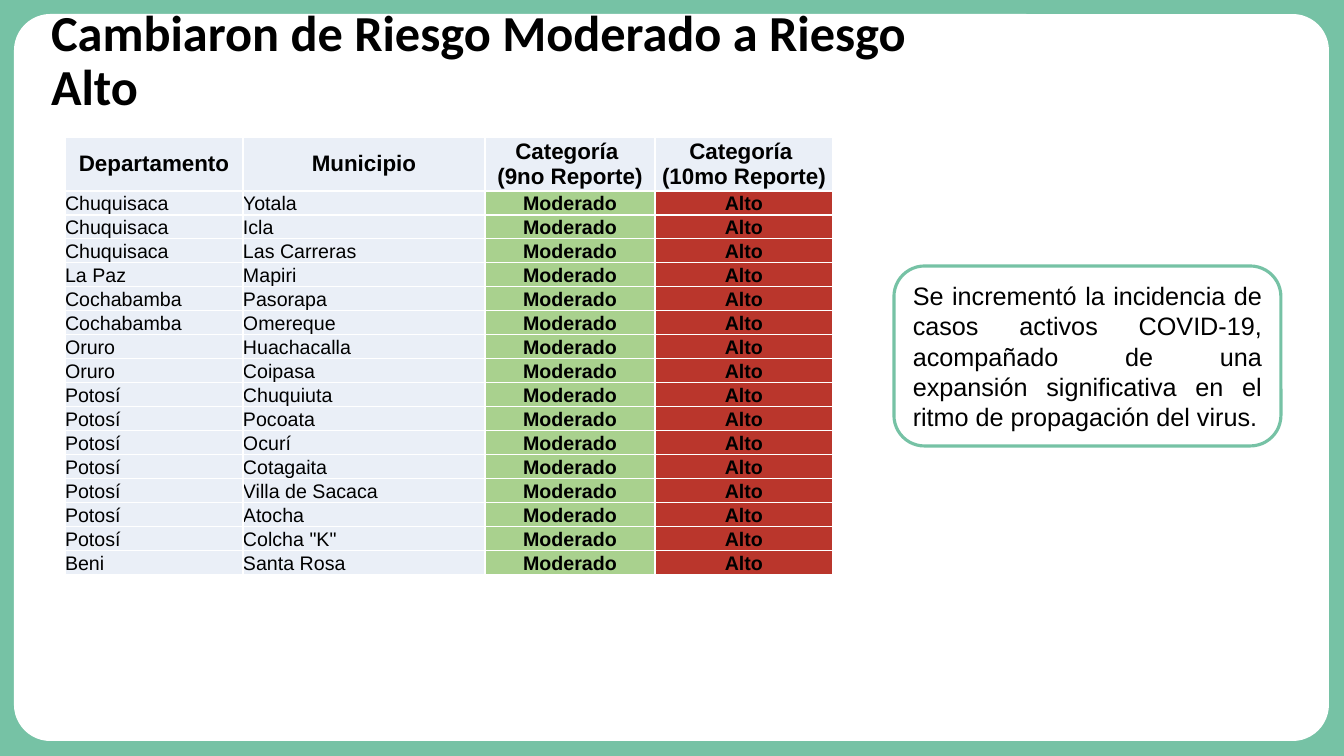
from dataclasses import dataclass

from lxml.etree import SubElement
from pptx import Presentation
from pptx.dml.color import RGBColor as Color
from pptx.enum.shapes import MSO_SHAPE as Shape
from pptx.enum.text import MSO_ANCHOR as Anchor, MSO_AUTO_SIZE as Fit, PP_ALIGN as Align
from pptx.oxml.ns import qn
from pptx.util import Emu, Pt


@dataclass(frozen=True)
class Theme:
    green: str = "76C2A5"
    white: str = "FFFFFF"
    black: str = "000000"
    pale: str = "EAEFF7"
    mild: str = "A9D18E"
    high: str = "BA362C"
    head: str = "Calibri"
    body: str = "Arial"
    title: int = 36
    note: int = 18
    label: int = 16
    cell: int = 14


THEME = Theme()
SCALE = 914400 / 100.8
WIDTHS = (178, 242, 170, 178)
HEADS = (
    "Departamento",
    "Municipio",
    "Categoría \n(9no Reporte)",
    "Categoría \n(10mo Reporte)",
)
TOWNS = {
    "Chuquisaca": ("Yotala", "Icla", "Las Carreras"),
    "La Paz": ("Mapiri",),
    "Cochabamba": ("Pasorapa", "Omereque"),
    "Oruro": ("Huachacalla", "Coipasa"),
    "Potosí": (
        "Chuquiuta", "Pocoata", "Ocurí", "Cotagaita",
        "Villa de Sacaca", "Atocha", 'Colcha "K"',
    ),
    "Beni": ("Santa Rosa",),
}


def px(size):
    return Emu(round(size * SCALE))


def paint(fill, color):
    fill.solid()
    fill.fore_color.rgb = Color.from_string(color)


def write(frame, text, size, font, align, bold=False):
    frame.text = text
    for para in frame.paragraphs:
        para.alignment = align
        for run in para.runs:
            run.font.size = Pt(size)
            run.font.name = font
            run.font.bold = bold
            run.font.color.rgb = Color.from_string(THEME.black)


def add_box(slide, box, curve):
    shape = slide.shapes.add_shape(Shape.ROUNDED_RECTANGLE, *map(px, box))
    shape.shadow.inherit = False
    shape.adjustments[0] = curve
    return shape


def add_card(slide):
    card = add_box(slide, (14, 14, 1315, 727), 0.05)
    paint(card.fill, THEME.white)
    card.line.fill.background()


def add_note(slide, text):
    note = add_box(slide, (894, 266, 387, 180), 0.17)
    note.fill.background()
    note.line.color.rgb = Color.from_string(THEME.green)
    note.line.width = Pt(2.25)
    note.text_frame.word_wrap = True
    note.text_frame.vertical_anchor = Anchor.MIDDLE
    write(note.text_frame, text, THEME.note, THEME.body, Align.JUSTIFY)


def add_edges(cell):
    props = cell._tc.get_or_add_tcPr()
    for side in ("lnL", "lnR", "lnT", "lnB"):
        edge = SubElement(props, qn(f"a:{side}"), w=str(Pt(1)))
        fill = SubElement(edge, qn("a:solidFill"))
        SubElement(fill, qn("a:srgbClr"), val=THEME.white)


def fill_cell(cell, text, color, size, align, bold, anchor):
    add_edges(cell)
    paint(cell.fill, color)
    cell.margin_left = cell.margin_right = 0
    cell.margin_top = cell.margin_bottom = 0
    cell.vertical_anchor = anchor
    write(cell.text_frame, text, size, THEME.body, align, bold)


def add_grid(slide):
    rows = [(area, town, "Moderado", "Alto") for area, towns in TOWNS.items() for town in towns]
    tall = [54] + [24] * len(rows)
    box = (65, 137, sum(WIDTHS), sum(tall))
    grid = slide.shapes.add_table(len(tall), len(WIDTHS), *map(px, box)).table
    grid.first_row = grid.horz_banding = False
    for col, width in zip(grid.columns, WIDTHS):
        col.width = px(width)
    for row, height in zip(grid.rows, tall):
        row.height = px(height)
    for c, text in enumerate(HEADS):
        fill_cell(grid.cell(0, c), text, THEME.pale, THEME.label, Align.CENTER, True, Anchor.MIDDLE)
    colors = (THEME.pale, THEME.pale, THEME.mild, THEME.high)
    for r, row in enumerate(rows, 1):
        for c, (text, color) in enumerate(zip(row, colors)):
            risk = c > 1
            align = Align.CENTER if risk else Align.LEFT
            fill_cell(grid.cell(r, c), text, color, THEME.cell, align, risk, Anchor.BOTTOM)


def set_title(slide, text):
    title = slide.shapes.title
    title.left, title.top, title.width, title.height = map(px, (41, 36, 953, 52))
    frame = title.text_frame
    frame.auto_size = Fit.NONE
    frame.word_wrap = True
    frame.vertical_anchor = Anchor.MIDDLE
    write(frame, text, THEME.title, THEME.head, Align.LEFT, True)
    frame.paragraphs[0].line_spacing = 0.9
    slide.shapes.element.append(title.element)


def main():
    deck = Presentation()
    deck.slide_width, deck.slide_height = px(1344), px(756)
    slide = deck.slides.add_slide(deck.slide_layouts[5])
    paint(slide.background.fill, THEME.green)
    add_card(slide)
    add_note(
        slide,
        "Se incrementó la incidencia de casos activos COVID-19, acompañado de una "
        "expansión significativa en el ritmo de propagación del virus.",
    )
    add_grid(slide)
    set_title(slide, "Cambiaron de Riesgo Moderado a Riesgo Alto")
    deck.save("out.pptx")


if __name__ == "__main__":
    main()
